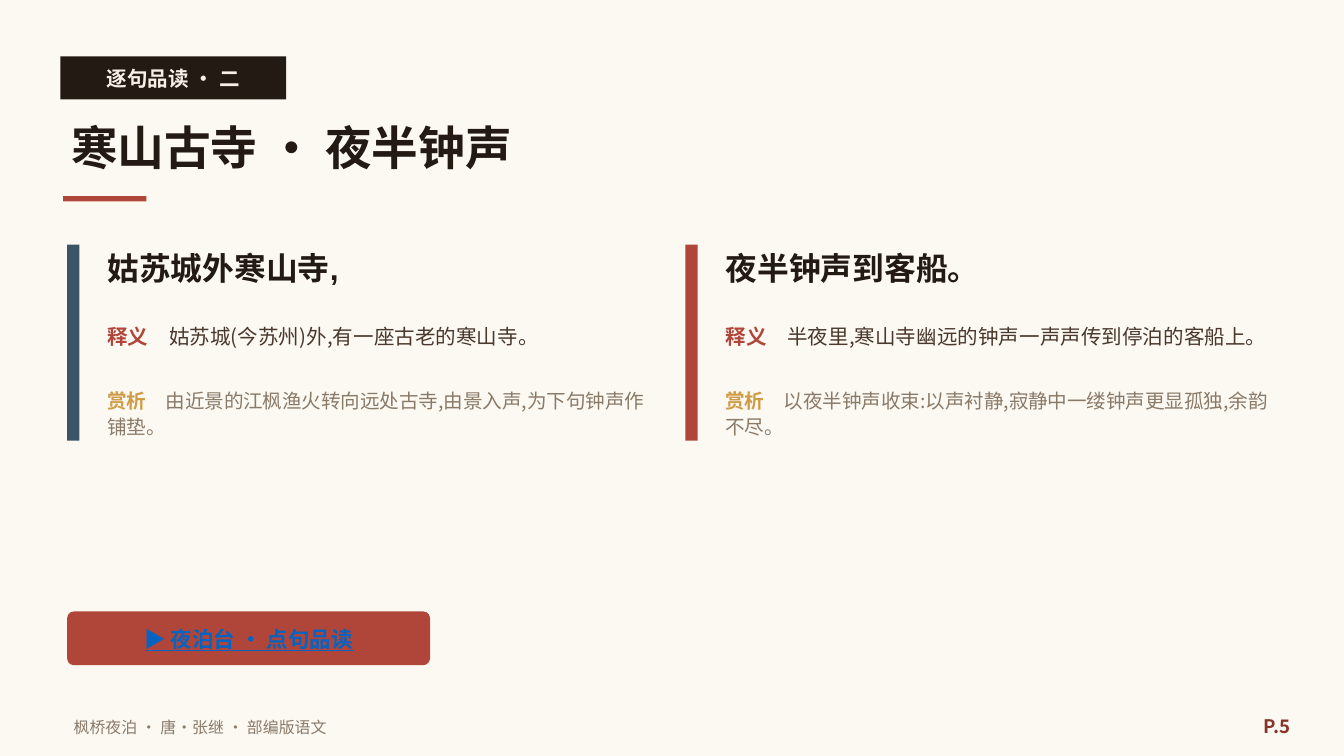
from dataclasses import dataclass

import pptx
import pptx.dml.color
import pptx.enum.shapes
import pptx.enum.text
import pptx.oxml
import pptx.oxml.ns
import pptx.util
from pptx.dml.color import RGBColor
from pptx.enum.shapes import MSO_SHAPE
from pptx.enum.text import PP_ALIGN
from pptx.util import Inches

PAPER = RGBColor(0xFC, 0xF9, 0xF3)
INK = RGBColor(0x24, 0x1A, 0x14)
CREAM = RGBColor(0xF7, 0xF0, 0xE6)
RED = RGBColor(0xB0, 0x46, 0x3A)
DARK_RED = RGBColor(0x8A, 0x33, 0x28)
BLUE = RGBColor(0x3A, 0x55, 0x66)
BROWN = RGBColor(0x4A, 0x38, 0x2C)
GOLD = RGBColor(0xCF, 0x9C, 0x45)
TAUPE = RGBColor(0x8A, 0x7A, 0x68)
LINK_BLUE = RGBColor(0x05, 0x63, 0xC1)
SANS = "Noto Sans CJK SC"
SLIDE_WIDTH = 10


@dataclass(frozen=True)
class Box:
    left: float
    top: float
    width: float
    height: float

    def lengths(self) -> tuple:
        return tuple(Inches(v) for v in (self.left, self.top, self.width, self.height))


@dataclass(frozen=True)
class Span:
    text: str
    color: RGBColor
    bold: bool = True


@dataclass(frozen=True)
class Verse:
    left: float
    accent: RGBColor
    line: str
    meaning: str
    comment: str


VERSES = (
    Verse(0.5, BLUE, "姑苏城外寒山寺,", "姑苏城(今苏州)外,有一座古老的寒山寺。",
          "由近景的江枫渔火转向远处古寺,由景入声,为下句钟声作铺垫。"),
    Verse(5.1, RED, "夜半钟声到客船。", "半夜里,寒山寺幽远的钟声一声声传到停泊的客船上。",
          "以夜半钟声收束:以声衬静,寂静中一缕钟声更显孤独,余韵不尽。"),
)


def write(frame, spans: tuple[Span, ...], size: float, align=PP_ALIGN.LEFT,
          font_name: str = SANS, spacing: float | None = None):
    frame.word_wrap = True
    frame.auto_size = pptx.enum.text.MSO_AUTO_SIZE.NONE
    frame.vertical_anchor = pptx.enum.text.MSO_ANCHOR.MIDDLE
    paragraph = frame.paragraphs[0]
    paragraph.alignment = align
    if spacing:
        paragraph.line_spacing = pptx.util.Pt(spacing)
    paragraph.font.size = pptx.util.Pt(size)
    paragraph.font.name = font_name
    defaults = paragraph._p.pPr.find(pptx.oxml.ns.qn("a:defRPr"))
    latin = defaults.find(pptx.oxml.ns.qn("a:latin"))
    latin.addnext(pptx.oxml.parse_xml(
        f'<a:ea {pptx.oxml.ns.nsdecls("a")} typeface="{SANS}"/>'))
    if len(spans) == 1:
        paragraph.font.bold = spans[0].bold
        paragraph.font.color.rgb = spans[0].color
    for span in spans:
        run = paragraph.add_run()
        run.text = span.text
        if len(spans) > 1:
            run.font.bold = span.bold
            run.font.color.rgb = span.color
    return paragraph


def add_text(slide, box: Box, *spans: Span, size: float, **style):
    return write(slide.shapes.add_textbox(*box.lengths()).text_frame, spans, size, **style)


def add_block(slide, box: Box, color: RGBColor, kind=MSO_SHAPE.RECTANGLE):
    block = slide.shapes.add_shape(kind, *box.lengths())
    block.shadow.inherit = False
    block.fill.solid()
    block.fill.fore_color.rgb = color
    block.line.fill.background()
    return block


def add_verse(slide, verse: Verse) -> None:
    add_block(slide, Box(verse.left, 1.82, 0.09, 1.46), verse.accent)
    left = verse.left + 0.2
    add_text(slide, Box(left, 1.78, 4.3, 0.42), Span(verse.line, INK), size=17,
             font_name="Arial")
    add_text(slide, Box(left, 2.24, 4.3, 0.5), Span("释义　", RED),
             Span(verse.meaning, BROWN, False), size=11, spacing=15)
    add_text(slide, Box(left, 2.76, 4.3, 0.62), Span("赏析　", GOLD),
             Span(verse.comment, TAUPE, False), size=10.5, spacing=14)


def main() -> None:
    deck = pptx.Presentation()
    deck.slide_width = Inches(SLIDE_WIDTH)
    deck.slide_height = Inches(SLIDE_WIDTH * 9 / 16)
    slide = deck.slides.add_slide(deck.slide_layouts[5])
    slide.background.fill.solid()
    slide.background.fill.fore_color.rgb = PAPER

    add_block(slide, Box(0.45, 0.42, 1.68, 0.32), INK)
    add_text(slide, Box(0.45, 0.41, 1.68, 0.34), Span("逐句品读 · 二", CREAM), size=11,
             align=PP_ALIGN.CENTER)

    title = slide.shapes.title
    title.left, title.top, title.width, title.height = Box(0.43, 0.78, 9, 0.62).lengths()
    write(title.text_frame, (Span("寒山古寺 · 夜半钟声", INK),), 25)
    add_block(slide, Box(0.47, 1.46, 0.62, 0.04), RED)

    for verse in VERSES:
        add_verse(slide, verse)

    button = add_block(slide, Box(0.5, 4.55, 2.7, 0.4), RED, MSO_SHAPE.ROUNDED_RECTANGLE)
    button.adjustments[0] = 0.125
    button_label = add_text(slide, Box(0.5, 4.54, 2.7, 0.42),
                            Span("▶ 夜泊台 · 点句品读", LINK_BLUE), size=11.5,
                            align=PP_ALIGN.CENTER)
    button_label.font.underline = True

    add_text(slide, Box(0.45, 5.26, 6, 0.3),
             Span("枫桥夜泊 · 唐·张继 · 部编版语文", TAUPE, False), size=8.5)
    add_text(slide, Box(9.1, 5.24, 0.6, 0.32), Span("P.5", DARK_RED), size=10,
             align=PP_ALIGN.RIGHT)
    deck.save("out.pptx")


if __name__ == "__main__":
    main()
